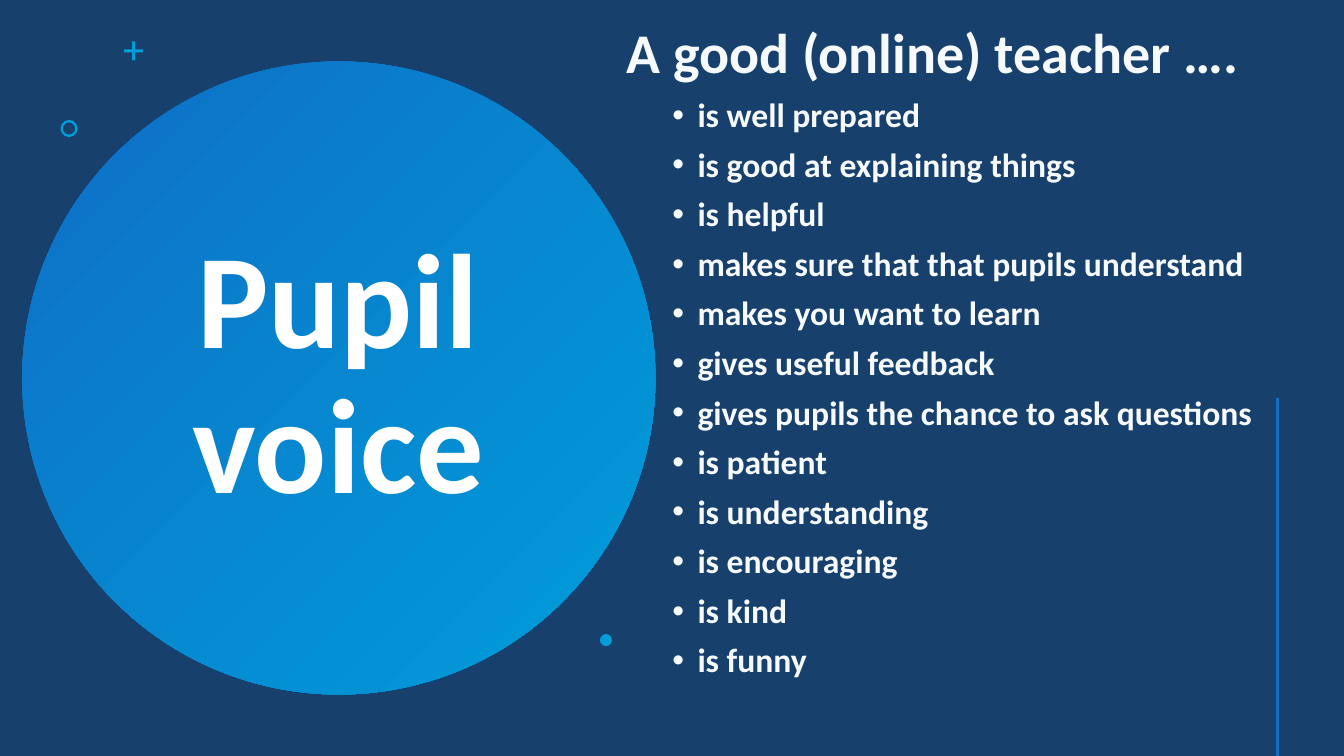
from lxml import etree
from pptx import Presentation
from pptx.dml.color import RGBColor
from pptx.enum.shapes import MSO_CONNECTOR, MSO_SHAPE
from pptx.enum.text import MSO_ANCHOR, PP_ALIGN
from pptx.oxml.ns import qn
from pptx.util import Inches, Pt

COLOURS = {
    "background": "17406D",
    "blue": "0F6FC6",
    "cyan": "009DD9",
    "white": "FFFFFF",
    "pale": "F7FAFC",
}

QUALITIES = [
    "is well prepared",
    "is good at explaining things",
    "is helpful",
    "makes sure that that pupils understand",
    "makes you want to learn",
    "gives useful feedback",
    "gives pupils the chance to ask questions",
    "is patient",
    "is understanding",
    "is encouraging",
    "is kind",
    "is funny",
]


def colour(name):
    return RGBColor.from_string(COLOURS[name])


def set_font(paragraph, size, colour_name):
    paragraph.font.name = "Calibri"
    paragraph.font.size = Pt(size)
    paragraph.font.bold = True
    paragraph.font.color.rgb = colour(colour_name)


def add_ornament(slide, kind, left, top, size, adjustment=None):
    shape = slide.shapes.add_shape(
        kind, Inches(left), Inches(top), Inches(size), Inches(size))
    shape.shadow.inherit = False
    shape.line.fill.background()
    shape.fill.solid()
    shape.fill.fore_color.rgb = colour("cyan")
    if adjustment is not None:
        shape.adjustments[0] = adjustment
    return shape


def add_gradient_circle(slide):
    circle = add_ornament(slide, MSO_SHAPE.OVAL, 0.22, 0.61, 6.28)
    circle.fill.gradient()
    circle.fill.gradient_angle = 315
    for stop, name in zip(circle.fill.gradient_stops, ("blue", "cyan")):
        stop.color.rgb = colour(name)


def format_title(slide):
    title = slide.shapes.title
    title.left, title.top = Inches(1.36), Inches(1.41)
    title.width, title.height = Inches(3.99), Inches(4.67)
    title.text_frame.text = "Pupil voice"
    title.text_frame.word_wrap = True
    title.text_frame.vertical_anchor = MSO_ANCHOR.MIDDLE
    paragraph = title.text_frame.paragraphs[0]
    paragraph.alignment = PP_ALIGN.CENTER
    paragraph.line_spacing = 0.9
    set_font(paragraph, 96, "white")
    slide.shapes._spTree.append(title._element)


def add_text_frame(slide, left, top, width, height):
    box = slide.shapes.add_textbox(
        Inches(left), Inches(top), Inches(width), Inches(height))
    box.text_frame.word_wrap = True
    return box.text_frame


def add_bullet(paragraph):
    properties = paragraph._p.get_or_add_pPr()
    properties.set("marL", str(Inches(0.25)))
    properties.set("indent", str(-Inches(0.25)))
    etree.SubElement(properties, qn("a:buFont")).set("typeface", "Arial")
    etree.SubElement(properties, qn("a:buChar")).set("char", "•")


def add_qualities(slide):
    frame = add_text_frame(slide, 6.57, 0.93, 6.44, 6.36)
    frame.text = "\n".join(QUALITIES)
    for index, paragraph in enumerate(frame.paragraphs):
        paragraph.line_spacing = 0.9
        paragraph.space_before = Pt(9.5 if index else 0)
        add_bullet(paragraph)
        set_font(paragraph, 24, "pale")


def add_heading(slide):
    frame = add_text_frame(slide, 6.12, 0.12, 6.81, 0.77)
    frame.text = "A good (online) teacher …."
    set_font(frame.paragraphs[0], 40, "pale")


def add_side_line(slide):
    line = slide.shapes.add_connector(
        MSO_CONNECTOR.STRAIGHT,
        Inches(12.67), Inches(3.95), Inches(12.67), Inches(7.5))
    line.line.color.rgb = colour("blue")
    line.line.width = Pt(2)
    etree.SubElement(line._element.spPr, qn("a:effectLst"))


def main():
    presentation = Presentation()
    presentation.slide_width = Inches(13.33)
    presentation.slide_height = Inches(7.5)
    slide = presentation.slides.add_slide(presentation.slide_layouts[5])
    slide.background.fill.solid()
    slide.background.fill.fore_color.rgb = colour("background")
    add_gradient_circle(slide)
    format_title(slide)
    add_ornament(slide, MSO_SHAPE.CROSS, 1.23, 0.41, 0.19, 0.42)
    add_ornament(slide, MSO_SHAPE.DONUT, 0.6, 1.19, 0.17, 0.14)
    add_qualities(slide)
    add_ornament(slide, MSO_SHAPE.OVAL, 5.95, 6.29, 0.12)
    add_side_line(slide)
    add_heading(slide)
    presentation.save("out.pptx")


if __name__ == "__main__":
    main()
